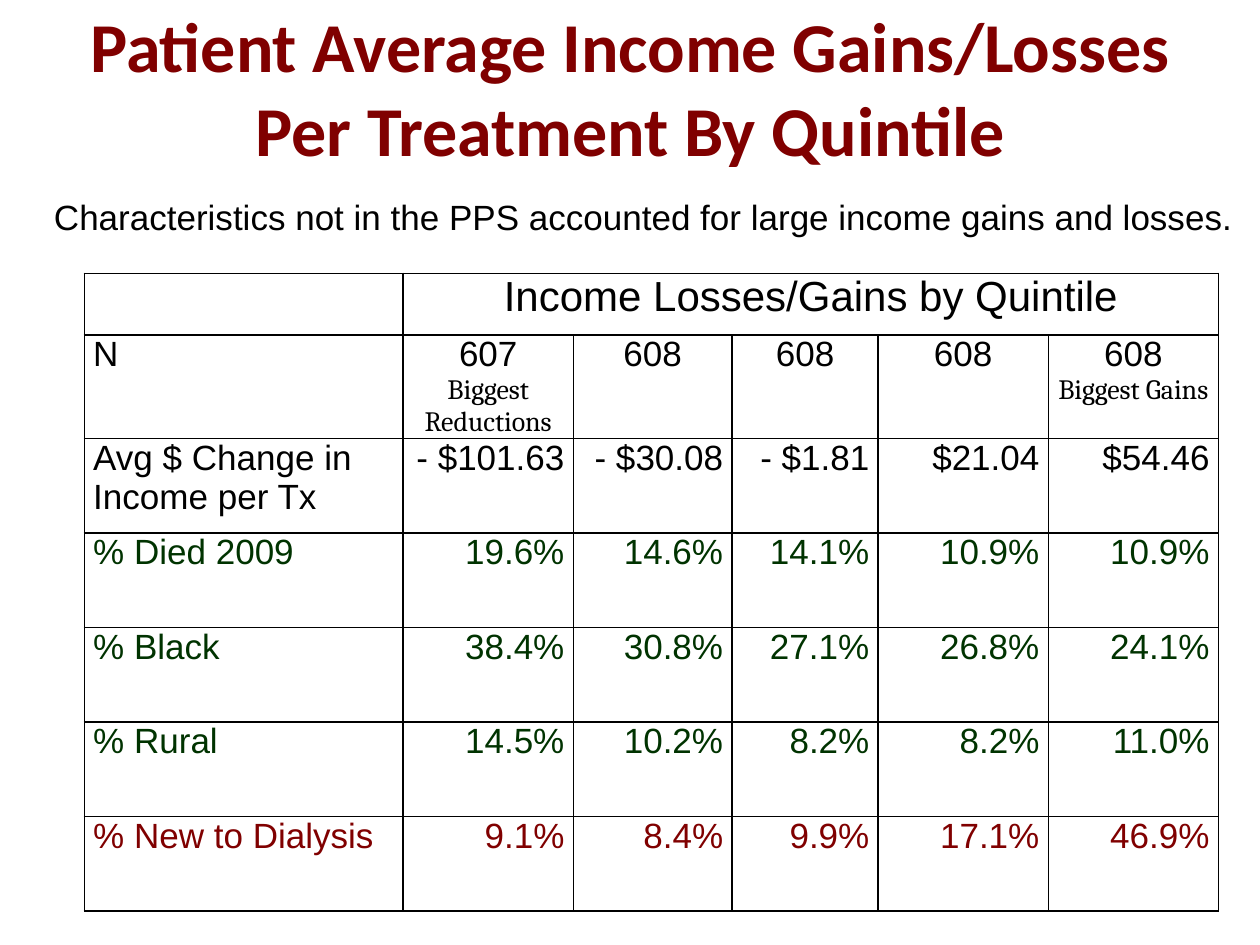
"""Build the slide on patient income gains and losses by quintile."""
import pptx
import pptx.util
import pptx.dml.color
import pptx.enum.text
import pptx.oxml
import pptx.oxml.ns

Inches = pptx.util.Inches
Pt = pptx.util.Pt
RGBColor = pptx.dml.color.RGBColor
ALIGN = pptx.enum.text.PP_ALIGN
ANCHOR = pptx.enum.text.MSO_ANCHOR

BLACK = RGBColor(0x00, 0x00, 0x00)
MAROON = RGBColor(0x80, 0x00, 0x00)
GREEN = RGBColor(0x00, 0x33, 0x00)

BODY = {"name": "Arial", "size": Pt(20), "bold": False}
HEADER = {**BODY, "size": Pt(24)}
NOTE = {"name": "Cambria", "size": Pt(16), "bold": False}
TITLE = {"name": "Calibri", "size": Pt(40), "bold": True}

COLUMN_WIDTHS = [2.53, 1.35, 1.26, 1.16, 1.35, 1.35]
ROW_HEIGHTS = [0.49] + [0.75] * 6
COUNTS = [("607", "Biggest Reductions"), ("608",), ("608",), ("608",),
          ("608", "Biggest Gains")]
MEASURES = [
    ("Avg $ Change in Income per Tx", BLACK,
     ["- $101.63", "- $30.08", "- $1.81", "$21.04", "$54.46"]),
    ("% Died 2009", GREEN, ["19.6%", "14.6%", "14.1%", "10.9%", "10.9%"]),
    ("% Black", GREEN, ["38.4%", "30.8%", "27.1%", "26.8%", "24.1%"]),
    ("% Rural", GREEN, ["14.5%", "10.2%", "8.2%", "8.2%", "11.0%"]),
    ("% New to Dialysis", MAROON, ["9.1%", "8.4%", "9.9%", "17.1%", "46.9%"]),
]


def write(p, text, style, color=BLACK, align=ALIGN.LEFT):
    """Put one formatted run into a paragraph."""
    p.alignment = align
    r = p.add_run()
    r.text = text
    for key, value in style.items():
        setattr(r.font, key, value)
    r.font.color.rgb = color


def place(shape, left, top, width, height):
    """Set the position and size of a shape."""
    box = {"left": left, "top": top, "width": width, "height": height}
    for key, value in box.items():
        setattr(shape, key, Inches(value))


def format_cell(cell):
    """Give a cell its margins, black borders and an empty fill."""
    margins = {"margin_left": 0.07, "margin_right": 0.07,
               "margin_top": 0, "margin_bottom": 0}
    for key, value in margins.items():
        setattr(cell, key, Inches(value))
    tc_pr = cell._tc.get_or_add_tcPr()
    for side in ("lnL", "lnR", "lnT", "lnB"):
        tc_pr.append(pptx.oxml.parse_xml(
            f'<a:{side} {pptx.oxml.ns.nsdecls("a")} w="{Pt(1)}"><a:solidFill>'
            f'<a:srgbClr val="{BLACK}"/></a:solidFill></a:{side}>'))
    cell.fill.background()


def add_title(s):
    """Format the title placeholder."""
    sp = s.shapes.title
    place(sp, 0.5, 0.3, 9, 0.78)
    tf = sp.text_frame
    tf.word_wrap = True
    tf.auto_size = pptx.enum.text.MSO_AUTO_SIZE.NONE
    tf.vertical_anchor = ANCHOR.MIDDLE
    write(tf.paragraphs[0],
          "Patient Average Income Gains/Losses Per Treatment By Quintile",
          TITLE, MAROON, ALIGN.CENTER)


def add_subtitle(s):
    """Add the line of text above the table."""
    sp = s.shapes.add_textbox(Inches(0.33), Inches(1.5), Inches(9.92), Inches(0.44))
    tf = sp.text_frame
    tf.word_wrap = True
    write(tf.paragraphs[0],
          "Characteristics not in the PPS accounted for large income gains and losses.",
          BODY)


def add_quintile_table(s):
    """Add the table of patient measures by quintile."""
    frame = s.shapes.add_table(len(ROW_HEIGHTS), len(COLUMN_WIDTHS), Inches(0.67),
                               Inches(2.17), Inches(9), Inches(sum(ROW_HEIGHTS)))
    table = frame.table
    table.first_row = table.horz_banding = False
    for column, width in zip(table.columns, COLUMN_WIDTHS):
        column.width = Inches(width)
    for row, height in zip(table.rows, ROW_HEIGHTS):
        row.height = Inches(height)
    for cell in table.iter_cells():
        format_cell(cell)

    header = table.cell(0, 1)
    header.merge(table.cell(0, len(COLUMN_WIDTHS) - 1))
    write(header.text_frame.paragraphs[0], "Income Losses/Gains by Quintile",
          HEADER, align=ALIGN.CENTER)

    write(table.cell(1, 0).text_frame.paragraphs[0], "N", BODY)
    for j, (count, *notes) in enumerate(COUNTS, 1):
        tf = table.cell(1, j).text_frame
        write(tf.paragraphs[0], count, BODY, align=ALIGN.CENTER)
        for note in notes:
            write(tf.add_paragraph(), note, NOTE, align=ALIGN.CENTER)

    for i, (label, color, values) in enumerate(MEASURES, 2):
        for j, text in enumerate([label, *values]):
            write(table.cell(i, j).text_frame.paragraphs[0], text, BODY, color,
                  ALIGN.RIGHT if j else ALIGN.LEFT)


def main():
    """Build and save the slide."""
    prs = pptx.Presentation()
    prs.slide_width = Inches(10)
    prs.slide_height = Inches(7.5)
    s = prs.slides.add_slide(prs.slide_layouts[5])
    add_title(s)
    add_quintile_table(s)
    add_subtitle(s)
    prs.save("out.pptx")


if __name__ == "__main__":
    main()
